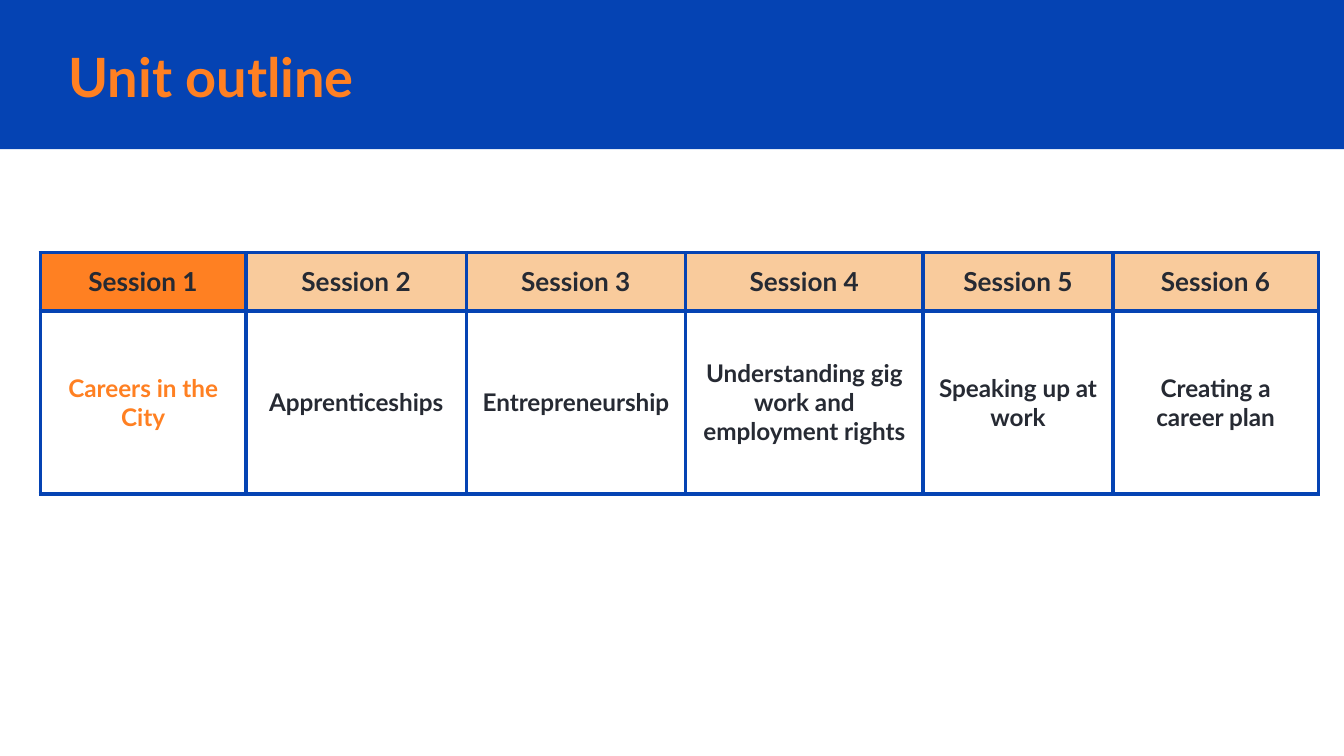
from lxml import etree
from pptx import Presentation, util as u
from pptx.dml.color import RGBColor
from pptx.enum import shapes, text
from pptx.oxml import ns

BLUE = RGBColor(0x05, 0x43, 0xB3)
ORANGE = RGBColor(0xFF, 0x80, 0x22)
PEACH = RGBColor(0xF9, 0xCB, 0x9C)
INK = RGBColor(0x26, 0x2A, 0x33)
WHITE = RGBColor(0xFF, 0xFF, 0xFF)
PAD = u.Inches(0.1)

TOPICS = [
    ("Careers in the City", 1.53),
    ("Apprenticeships", 1.64),
    ("Entrepreneurship", 1.63),
    ("Understanding gig work and employment rights", 1.77),
    ("Speaking up at work", 1.41),
    ("Creating a career plan", 1.53),
]


def write(frame, words, size, color, align):
    para = frame.paragraphs[0]
    para.alignment = align
    run = para.add_run()
    run.text = words
    font = run.font
    font.name, font.size, font.bold = "Lato", u.Pt(size), True
    font.color.rgb = color


def edge(cell):
    props = cell._tc.get_or_add_tcPr()
    for side in ("a:lnL", "a:lnR", "a:lnT", "a:lnB"):
        line = etree.SubElement(props, ns.qn(side), w=str(u.Pt(2.25)))
        fill = etree.SubElement(line, ns.qn("a:solidFill"))
        etree.SubElement(fill, ns.qn("a:srgbClr"), val=str(BLUE))


deck = Presentation()
wide = u.Inches(10)
high = wide * 9 // 16
deck.slide_width, deck.slide_height = wide, high
slide = deck.slides.add_slide(deck.slide_layouts[5])

# Header band, with the title in front of it
band = slide.shapes.add_shape(
    shapes.MSO_SHAPE.RECTANGLE, 0, 0, wide, u.Inches(1.11))
band.shadow.inherit = False
band.fill.solid()
band.fill.fore_color.rgb = BLUE
band.line.fill.background()

title = slide.shapes.title
band.element.addnext(title.element)
title.left, title.top = u.Inches(0.41), int(high * 0.05)
title.width, title.height = u.Inches(8.46), int(high * 0.1)
frame = title.text_frame
frame.margin_left = frame.margin_right = PAD
frame.margin_top = frame.margin_bottom = PAD
frame.vertical_anchor = text.MSO_ANCHOR.MIDDLE
frame.auto_size = text.MSO_AUTO_SIZE.NONE
write(frame, "Unit outline", 29, ORANGE, text.PP_ALIGN.LEFT)

# Session table: the first session is the current one
total = sum(width for _, width in TOPICS)
grid = slide.shapes.add_table(
    2, len(TOPICS), int(wide * 0.03), u.Inches(1.88),
    u.Inches(total), u.Inches(1.73)).table
grid.rows[0].height, grid.rows[1].height = u.Inches(0.37), u.Inches(1.36)

for col, (topic, width) in enumerate(TOPICS):
    grid.columns[col].width = u.Inches(width)
    now = col == 0
    rows = [
        (f"Session {col + 1}", 14, INK, ORANGE if now else PEACH,
         text.MSO_ANCHOR.TOP),
        (topic, 13, ORANGE if now else INK, WHITE, text.MSO_ANCHOR.MIDDLE),
    ]
    for row, (words, size, color, back, anchor) in enumerate(rows):
        cell = grid.cell(row, col)
        edge(cell)
        cell.fill.solid()
        cell.fill.fore_color.rgb = back
        cell.margin_left = cell.margin_right = PAD
        cell.margin_top = cell.margin_bottom = PAD
        cell.vertical_anchor = anchor
        write(cell.text_frame, words, size, color, text.PP_ALIGN.CENTER)

deck.save("out.pptx")
